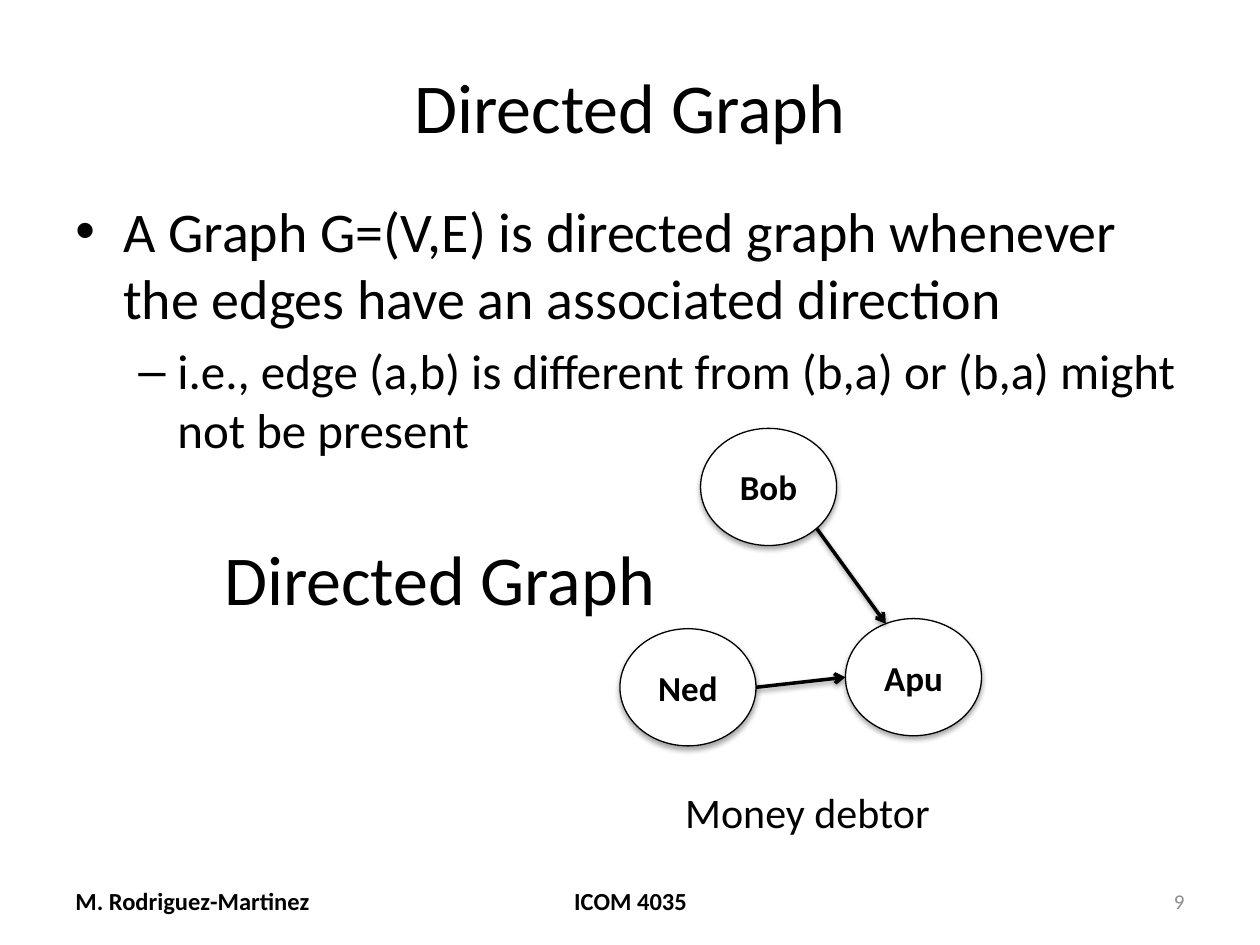
import math
from dataclasses import dataclass

import pptx
import pptx.dml.color
import pptx.enum.shapes
import pptx.enum.text
import pptx.oxml
import pptx.oxml.ns
import pptx.util
from lxml import etree

Inches = pptx.util.Inches
Pt = pptx.util.Pt
qn = pptx.oxml.ns.qn
ALIGN = pptx.enum.text.PP_ALIGN
ANCHOR = pptx.enum.text.MSO_ANCHOR


@dataclass(frozen=True)
class Theme:
    font: str = "Calibri"
    ink: str = "000000"
    paper: str = "FFFFFF"
    muted: str = "8C8C8C"
    title: int = 40
    body: int = 32
    detail: int = 28
    caption: int = 24
    node: int = 20
    footer: int = 14
    number: int = 12


THEME = Theme()
NODE_W, NODE_H = 1.08, 0.93


def rgb(value):
    return pptx.dml.color.RGBColor.from_string(value)


def write(p, text, size, bold=False, color=THEME.ink, align=ALIGN.LEFT):
    p.alignment = align
    r = p.add_run()
    r.text = text
    r.font.name = THEME.font
    r.font.size = Pt(size)
    r.font.bold = bold
    r.font.color.rgb = rgb(color)


def add_box(slide, x, y, w, h, anchor=ANCHOR.TOP, wrap=True):
    """Add a text box and return its text frame."""
    tf = slide.shapes.add_textbox(Inches(x), Inches(y), Inches(w), Inches(h)).text_frame
    tf.word_wrap = wrap
    tf.vertical_anchor = anchor
    return tf


def add_label(slide, text, x, y, w, h, size, anchor=ANCHOR.MIDDLE, wrap=True, **style):
    tf = add_box(slide, x, y, w, h, anchor, wrap)
    write(tf.paragraphs[0], text, size, **style)
    return tf


def add_free_label(slide, text, x, y, w, h, size):
    """Add an unwrapped label whose box grows with its text."""
    tf = add_label(slide, text, x, y, w, h, size, ANCHOR.TOP, wrap=False)
    tf.auto_size = pptx.enum.text.MSO_AUTO_SIZE.SHAPE_TO_FIT_TEXT


def set_bullet(p, char, left, hang):
    pPr = p._p.get_or_add_pPr()
    pPr.set("marL", str(Inches(left)))
    pPr.set("indent", str(-Inches(hang)))
    etree.SubElement(pPr, qn("a:buFont")).set("typeface", "Arial")
    etree.SubElement(pPr, qn("a:buChar")).set("char", char)


def add_bullets(slide, items, x, y, w, h):
    tf = add_box(slide, x, y, w, h)
    for i, (text, level, size, char, left, hang) in enumerate(items):
        p = tf.add_paragraph() if i else tf.paragraphs[0]
        p.level = level
        p.space_before = Pt(size * 0.2)
        write(p, text, size)
        set_bullet(p, char, left, hang)


def add_shadow(shape, distance, opacity):
    """Add a soft shadow straight below a shape whose line is already set."""
    effects = etree.SubElement(shape._element.spPr, qn("a:effectLst"))
    shadow = etree.SubElement(effects, qn("a:outerShdw"), blurRad=str(Pt(3.1)),
                              dist=str(Pt(distance)), dir="5400000", rotWithShape="0")
    color = etree.SubElement(shadow, qn("a:srgbClr"), val=THEME.ink)
    etree.SubElement(color, qn("a:alpha"), val=str(opacity * 1000))


def add_node(slide, name, x, y):
    s = slide.shapes.add_shape(pptx.enum.shapes.MSO_SHAPE.OVAL, Inches(x), Inches(y),
                               Inches(NODE_W), Inches(NODE_H))
    s.fill.solid()
    s.fill.fore_color.rgb = rgb(THEME.paper)
    s.line.color.rgb = rgb(THEME.ink)
    s.line.width = Pt(0.75)
    add_shadow(s, distance=1.8, opacity=35)
    s.text_frame.vertical_anchor = ANCHOR.MIDDLE
    write(s.text_frame.paragraphs[0], name, THEME.node, bold=True, align=ALIGN.CENTER)


def rim(node, degrees):
    """Return the point on a node's outline, clockwise from its right side."""
    x, y = node
    angle = math.radians(degrees)
    return (x + NODE_W / 2 * (1 + math.cos(angle)),
            y + NODE_H / 2 * (1 + math.sin(angle)))


def add_edge(slide, start, end):
    points = [Inches(v) for v in (*start, *end)]
    c = slide.shapes.add_connector(pptx.enum.shapes.MSO_CONNECTOR.STRAIGHT, *points)
    c.line.color.rgb = rgb(THEME.ink)
    c.line.width = Pt(2)
    etree.SubElement(c.line._get_or_add_ln(), qn("a:tailEnd"), type="arrow")
    add_shadow(c, distance=1.6, opacity=38)


def main():
    prs = pptx.Presentation()
    prs.slide_width, prs.slide_height = Inches(10), Inches(7.5)
    slide = prs.slides.add_slide(prs.slide_layouts[6])

    add_label(slide, "Directed Graph", 0.5, 0.3, 9, 1.07, THEME.title, align=ALIGN.CENTER)
    add_bullets(slide, [
        ("A Graph G=(V,E) is directed graph whenever the edges have an associated direction",
         0, THEME.body, "•", 0.38, 0.38),
        ("i.e., edge (a,b) is different from (b,a) or (b,a) might not be present",
         1, THEME.detail, "–", 0.81, 0.31),
    ], 0.5, 1.51, 9, 5.19)

    add_label(slide, "M. Rodriguez-Martinez", 0.5, 6.95, 2.33, 0.4, THEME.footer, bold=True)
    add_label(slide, "ICOM 4035", 3.42, 6.95, 3.17, 0.4, THEME.footer, bold=True,
              align=ALIGN.CENTER)
    add_label(slide, "9", 7.17, 6.95, 2.33, 0.4, THEME.number, color=THEME.muted,
              align=ALIGN.RIGHT)

    nodes = {"Bob": (5.56, 3.4), "Ned": (4.92, 4.99), "Apu": (6.71, 4.91)}
    for name, position in nodes.items():
        add_node(slide, name, *position)
    for source, leave, target, arrive in [("Bob", 45, "Apu", 246), ("Ned", 0, "Apu", 180)]:
        add_edge(slide, rim(nodes[source], leave), rim(nodes[target], arrive))

    add_free_label(slide, "Money debtor", 5.34, 6.19, 2.17, 0.5, THEME.caption)
    add_free_label(slide, "Directed Graph", 1.68, 4.2, 3.68, 0.77, THEME.title)
    prs.save("out.pptx")


if __name__ == "__main__":
    main()
